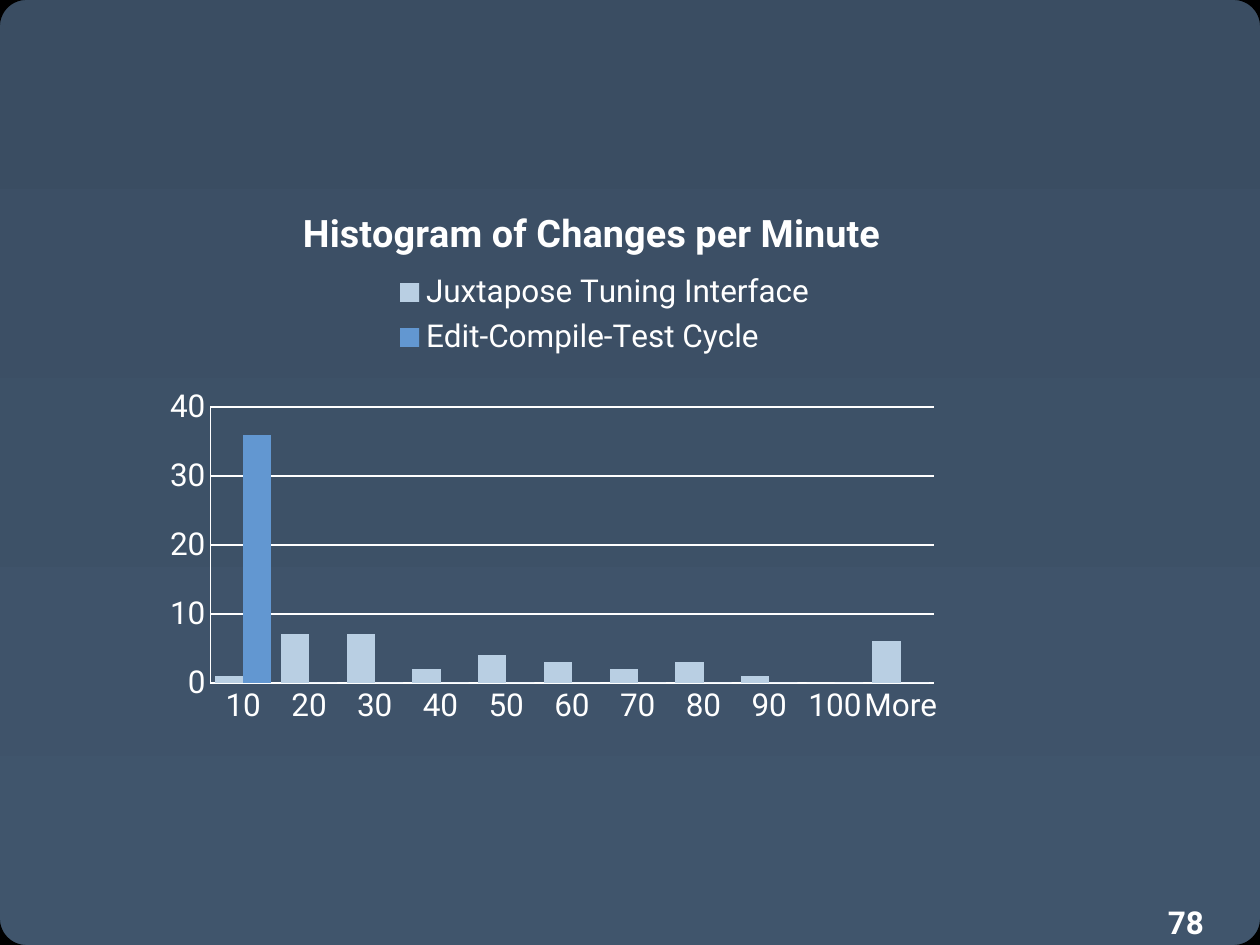
from math import cos, pi, sin

from lxml.etree import Element, SubElement
from pptx import Presentation
from pptx.chart.data import CategoryChartData
from pptx.dml.color import RGBColor
from pptx.enum.chart import XL_CHART_TYPE, XL_LEGEND_POSITION, XL_TICK_MARK
from pptx.oxml.ns import qn
from pptx.util import Inches, Pt

WHITE = RGBColor(0xFF, 0xFF, 0xFF)
BLACK = RGBColor(0x00, 0x00, 0x00)
SLATE_TOP = RGBColor(0x3A, 0x4D, 0x62)
SLATE_BOTTOM = RGBColor(0x40, 0x55, 0x6C)
PALE_BLUE = RGBColor(0xB9, 0xCF, 0xE3)
MID_BLUE = RGBColor(0x62, 0x97, 0xD1)
FONT = "Roboto"
WIDTH, HEIGHT = 10, 7.5
CHART_WIDTH, CHART_HEIGHT = 10.67, 5.25
CORNER_INSET, CORNER_RADIUS, CORNER_STEPS = 0.21, 0.28, 16


def place(element, index, left, top, size=None, target=None):
    for old_layout in element.findall(qn("c:layout")):
        element.remove(old_layout)
    layout = Element(qn("c:layout"))
    element.insert(index, layout)
    settings = {"layoutTarget": target} if target else {}
    settings.update(xMode="edge", yMode="edge", x=left / CHART_WIDTH, y=top / CHART_HEIGHT)
    if size:
        settings.update(w=size[0] / CHART_WIDTH, h=size[1] / CHART_HEIGHT)
    manual = SubElement(layout, qn("c:manualLayout"))
    for name, value in settings.items():
        SubElement(manual, qn(f"c:{name}")).set("val", str(value))


def style_font(font, size, bold=False):
    font.name = FONT
    font.size = Pt(size)
    font.bold = bold
    font.color.rgb = WHITE


presentation = Presentation()
presentation.slide_width = Inches(WIDTH)
presentation.slide_height = Inches(HEIGHT)
slide = presentation.slides.add_slide(presentation.slide_layouts[6])

background = slide.background.fill
background.gradient()
background.gradient_angle = 270
for stop, color in zip(background.gradient_stops, (SLATE_TOP, SLATE_BOTTOM)):
    stop.color.rgb = color

right, bottom = WIDTH - CORNER_INSET, HEIGHT - CORNER_INSET
corners = [
    (right, CORNER_INSET, -pi / 2),
    (CORNER_INSET, CORNER_INSET, pi),
    (CORNER_INSET, bottom, pi / 2),
    (right, bottom, 0),
]
for center_x, center_y, start in corners:
    angles = [start + pi / 2 * step / CORNER_STEPS for step in range(CORNER_STEPS + 1)]
    points = [
        (Inches(center_x + CORNER_RADIUS * cos(angle)), Inches(center_y + CORNER_RADIUS * sin(angle)))
        for angle in angles
    ]
    builder = slide.shapes.build_freeform(*points[0])
    builder.add_line_segments(points[1:], close=False)
    corner = builder.convert_to_shape()
    corner.shadow.inherit = False
    corner.fill.background()
    corner.line.color.rgb = BLACK
    corner.line.width = Pt(10)

number_box = slide.shapes.add_textbox(Inches(9.17), Inches(7.12), Inches(0.83), Inches(0.3))
number_box.text_frame.word_wrap = True
number_run = number_box.text_frame.paragraphs[0].add_run()
number_run.text = "78"
style_font(number_run.font, 18, bold=True)

chart_data = CategoryChartData()
chart_data.categories = [str(limit) for limit in range(10, 101, 10)] + ["More"]
chart_data.add_series("Juxtapose Tuning Interface", (1, 7, 7, 2, 4, 3, 2, 3, 1, 0, 6))
chart_data.add_series("Edit-Compile-Test Cycle", [36] + [0] * 10)
chart = slide.shapes.add_chart(
    XL_CHART_TYPE.COLUMN_CLUSTERED,
    Inches(0.75), Inches(1.25), Inches(CHART_WIDTH), Inches(CHART_HEIGHT), chart_data,
).chart
style_font(chart.font, 18)

chart.has_title = True
title_run = chart.chart_title.text_frame.paragraphs[0].add_run()
title_run.text = "Histogram of Changes per Minute"
style_font(title_run.font, 21.6, bold=True)
place(chart.chart_title._element, 1, 1.6, 0.34)

chart.has_legend = True
chart.legend.position = XL_LEGEND_POSITION.RIGHT
chart.legend.include_in_layout = False
style_font(chart.legend.font, 18)
place(chart.legend._element, 1, 2.35, 0.86, size=(3.4, 0.78))

plot = chart.plots[0]
plot.gap_width = 33
plot.overlap = 0
plot.vary_by_categories = False
plot_area = chart._chartSpace.find(f"{qn('c:chart')}/{qn('c:plotArea')}")
place(plot_area, 0, 0.92, 1.98, size=(5.74, 2.19), target="inner")
for series, color in zip(plot.series, (PALE_BLUE, MID_BLUE)):
    series.format.fill.solid()
    series.format.fill.fore_color.rgb = color
    series.invert_if_negative = False

for axis in (chart.category_axis, chart.value_axis):
    axis.major_tick_mark = XL_TICK_MARK.NONE
    axis.minor_tick_mark = XL_TICK_MARK.NONE
    axis.format.line.color.rgb = WHITE
    axis.format.line.width = Pt(0.75)
    style_font(axis.tick_labels.font, 18)
chart.value_axis.minimum_scale = 0
chart.value_axis.maximum_scale = 40
chart.value_axis.major_unit = 10
chart.value_axis.has_major_gridlines = True
gridline = chart.value_axis.major_gridlines.format.line
gridline.color.rgb = WHITE
gridline.width = Pt(1)

presentation.save("out.pptx")
